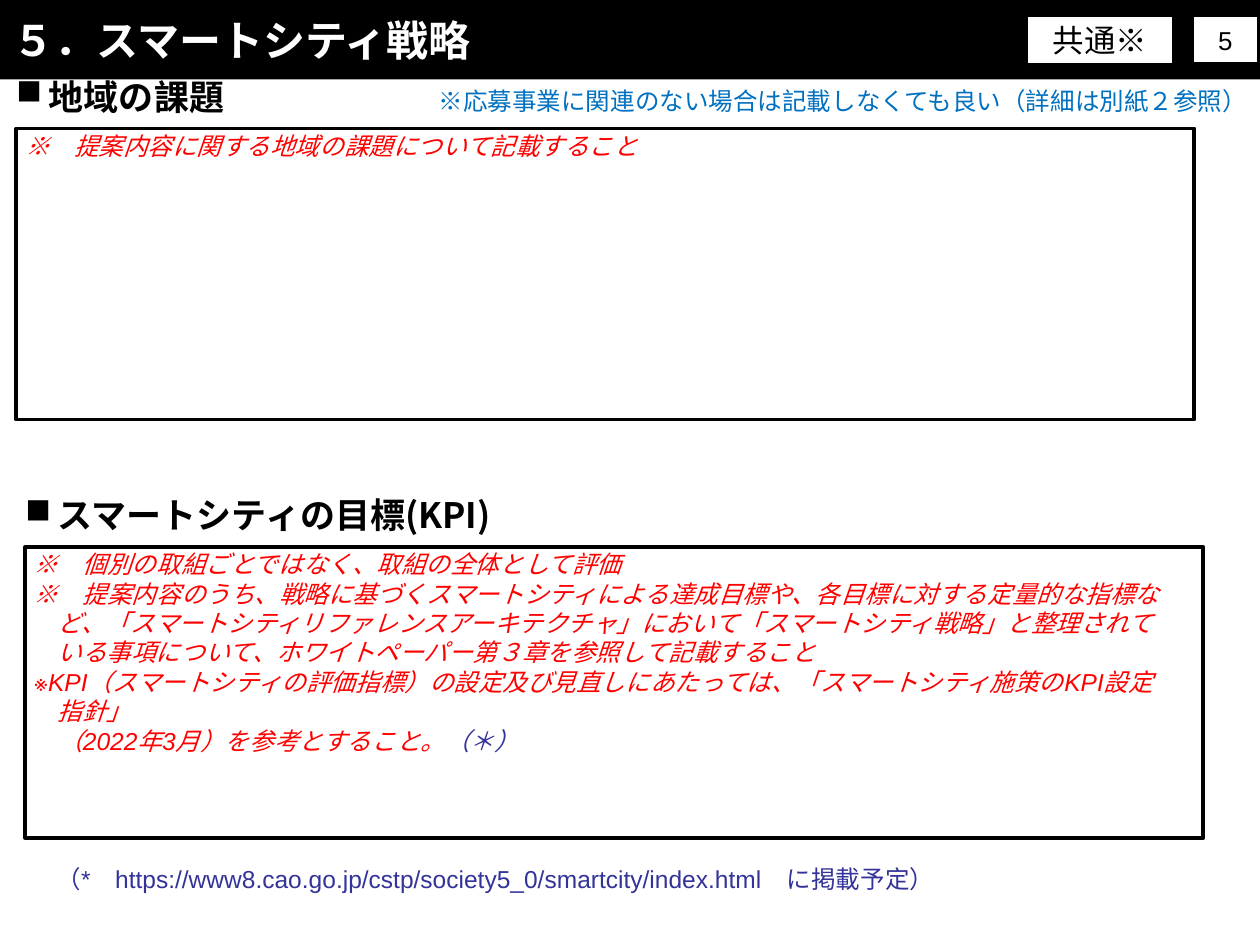
from lxml.etree import SubElement
from pptx import Presentation
from pptx.dml.color import RGBColor
from pptx.enum.shapes import MSO_SHAPE
from pptx.enum.text import MSO_ANCHOR, PP_ALIGN
from pptx.oxml.ns import qn
from pptx.util import Inches, Pt

BLACK = RGBColor(0x00, 0x00, 0x00)
WHITE = RGBColor(0xFF, 0xFF, 0xFF)
RED = RGBColor(0xFF, 0x00, 0x00)
BLUE = RGBColor(0x00, 0x70, 0xC0)
INDIGO = RGBColor(0x33, 0x33, 0x99)
LATIN_FONT, HEADING_FONT, JAPANESE_FONT = "Arial", "Cabin", "Noto Sans CJK JP"

presentation = Presentation()
presentation.slide_width, presentation.slide_height = Inches(10), Inches(7.5)
slide = presentation.slides.add_slide(presentation.slide_layouts[6])


def add_box(position, fill=None, line=None, line_width=1):
    """Add a rectangle, or a text box when it has neither fill nor line."""
    lengths = [Inches(value) for value in position]
    if fill is None and line is None:
        shape = slide.shapes.add_textbox(*lengths)
    else:
        shape = slide.shapes.add_shape(MSO_SHAPE.RECTANGLE, *lengths)
        shape.shadow.inherit = False
        if fill is None:
            shape.fill.background()
        else:
            shape.fill.solid()
            shape.fill.fore_color.rgb = fill
        if line is None:
            shape.line.fill.background()
        else:
            shape.line.color.rgb = line
            shape.line.width = Pt(line_width)
        shape.text_frame.vertical_anchor = MSO_ANCHOR.MIDDLE
    shape.text_frame.word_wrap = True
    return shape.text_frame


def add_run(paragraph, text, size, color, font=LATIN_FONT, bold=False, italic=False,
            align=PP_ALIGN.LEFT):
    paragraph.alignment = align
    run = paragraph.add_run()
    run.text = text
    run.font.name = font
    run.font.size = Pt(size)
    run.font.bold = bold
    run.font.italic = italic
    run.font.color.rgb = color
    SubElement(run.font._element, qn("a:ea"), typeface=JAPANESE_FONT)


# Title bar with its label and page number
title = add_box((0, 0, 10, 0.63), fill=BLACK)
add_run(title.paragraphs[0], "５．スマートシティ戦略", 24, WHITE, JAPANESE_FONT, bold=True)

for position, line_width, text, size in [
    ((8.15, 0.13, 1.16, 0.38), 1, "共通※", 18),
    ((9.47, 0.13, 0.51, 0.37), 0.75, "5", 14.8),
]:
    label = add_box(position, WHITE, BLACK, line_width)
    add_run(label.paragraphs[0], text, size, BLACK, align=PP_ALIGN.CENTER)

# Sections: heading, frame and instructions
HANGING = 0.19
sections = [
    ((0.03, 0.55), (0.13, 1.02), (0.1, 0.99, 9.21, 0.57),
     [("地域の課題", HEADING_FONT)],
     [(0, [("※　提案内容に関する地域の課題について記載すること", RED)])]),
    ((0.1, 3.87), (0.2, 4.34), (0.17, 4.31, 9.21, 1.75),
     [("スマートシティの", HEADING_FONT), ("目標(KPI)", JAPANESE_FONT)],
     [(0, [("※　個別の取組ごとではなく、取組の全体として評価", RED)]),
      (HANGING, [("※　提案内容のうち、戦略に基づくスマートシティによる達成目標や、"
                  "各目標に対する定量的な指標など、「スマートシティリファレンスアーキテクチャ」"
                  "において「スマートシティ戦略」と整理されている事項について、"
                  "ホワイトペーパー第３章を参照して記載すること", RED)]),
      (HANGING, [("※KPI（スマートシティの評価指標）の設定及び見直しにあたっては、"
                  "「スマートシティ施策のKPI設定指針」", RED)]),
      (HANGING, [("　（2022年3月）を参考とすること。", RED), ("（＊）", INDIGO)])]),
]
for heading_at, frame_at, text_position, heading_runs, instructions in sections:
    add_box((*frame_at, 9.35, 2.31), line=BLACK, line_width=2.25)

    paragraph = add_box((*heading_at, 4.69, 0.44)).paragraphs[0]
    paragraph.space_before = Pt(1)
    for text, font in heading_runs:
        add_run(paragraph, text, 20, BLACK, font, bold=True)
    properties = paragraph._p.get_or_add_pPr()
    properties.set("marL", str(Inches(0.26)))
    properties.set("indent", str(Inches(-0.26)))
    SubElement(properties, qn("a:buChar"), char="■")

    text_frame = add_box(text_position)
    for index, (hanging, runs) in enumerate(instructions):
        paragraph = text_frame.add_paragraph() if index else text_frame.paragraphs[0]
        for text, color in runs:
            add_run(paragraph, text, 14, color, italic=True)
        properties = paragraph._p.get_or_add_pPr()
        properties.set("marL", str(Inches(hanging)))
        properties.set("indent", str(Inches(-hanging)))

# Notes beside the first heading and below the last frame
for position, text, color, align in [
    ((3.27, 0.63, 6.73, 0.34),
     "※応募事業に関連のない場合は記載しなくても良い（詳細は別紙２参照）", BLUE, PP_ALIGN.RIGHT),
    ((0.35, 6.81, 8.03, 0.34),
     "（*　https://www8.cao.go.jp/cstp/society5_0/smartcity/index.html　に掲載予定）",
     INDIGO, PP_ALIGN.LEFT),
]:
    add_run(add_box(position).paragraphs[0], text, 14, color, align=align)

presentation.save("out.pptx")
